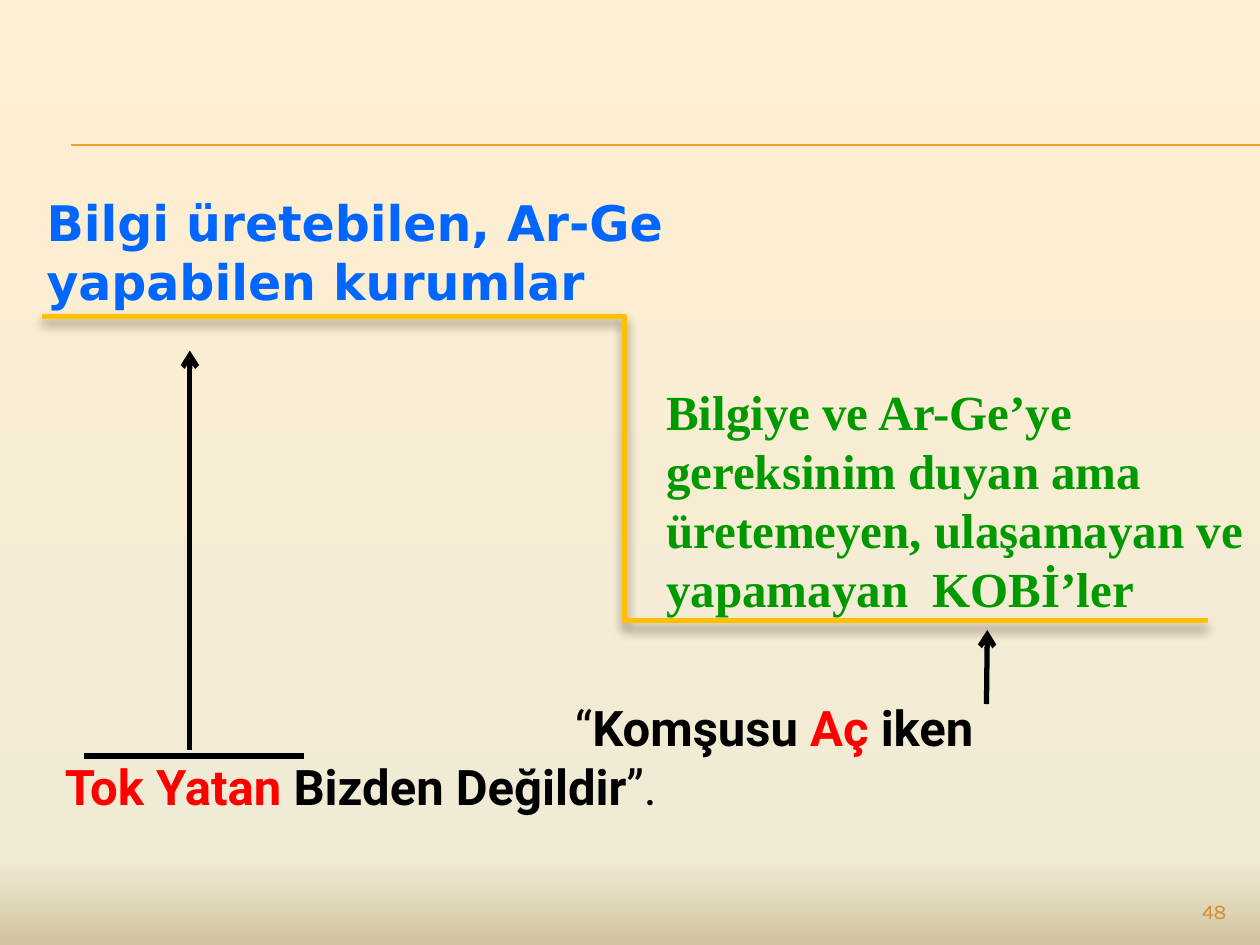
from lxml import etree
from pptx import Presentation
from pptx.dml.color import RGBColor
from pptx.enum.shapes import MSO_CONNECTOR
from pptx.enum.text import MSO_ANCHOR, PP_ALIGN
from pptx.oxml.ns import qn
from pptx.util import Pt

STRAIGHT = MSO_CONNECTOR.STRAIGHT
ELBOW = MSO_CONNECTOR.ELBOW
TOP = MSO_ANCHOR.TOP
LEFT = PP_ALIGN.LEFT
RIGHT = PP_ALIGN.RIGHT

BLACK = "000000"
RED = "FF0000"
GOLD = "FFC000"
RULE_ORANGE = "F0A22E"
BACKDROP = [(0, "FFEFD1"), (91, "F0EBD5"), (100, "D1C39F")]


def rgb(value):
    return RGBColor.from_string(value)


def add_node(parent, tag, **attributes):
    return etree.SubElement(parent, qn(tag), attributes)


def paint_backdrop(slide):
    fill = slide.background.fill
    fill.gradient()
    fill.gradient_angle = 270
    stops = slide.element.find(".//" + qn("a:gsLst"))
    for stop in list(stops):
        stops.remove(stop)
    for percent, color in BACKDROP:
        stop = add_node(stops, "a:gs", pos=str(percent * 1000))
        add_node(stop, "a:srgbClr", val=color)


def add_line(slide, start, end, color, width, kind=STRAIGHT, arrow=False):
    line = slide.shapes.add_connector(kind, *map(Pt, start + end))
    line.line.color.rgb = rgb(color)
    line.line.width = Pt(width)
    if arrow:
        add_node(line.line._get_or_add_ln(), "a:tailEnd", type="arrow")
    effects = add_node(line._element.spPr, "a:effectLst")
    return effects


def add_text(slide, box, paragraphs, font, align=LEFT, wrap=True, first_indent=0):
    frame = slide.shapes.add_textbox(*map(Pt, box)).text_frame
    frame.word_wrap = wrap
    frame.vertical_anchor = TOP
    for index, runs in enumerate(paragraphs):
        paragraph = frame.paragraphs[0] if index == 0 else frame.add_paragraph()
        paragraph.alignment = align
        if first_indent and index == 0:
            properties = paragraph._p.get_or_add_pPr()
            properties.set("marL", "0")
            properties.set("indent", str(Pt(first_indent)))
        for words, color, bold in runs:
            run = paragraph.add_run()
            run.text = words
            run.font.color.rgb = rgb(color)
            for name, value in {**font, "bold": bold}.items():
                setattr(run.font, name, value)


def add_header_rule(slide, box):
    left, top, width, gap = box
    for y in (top, top + gap):
        add_line(slide, (left, y), (left + width, y), RULE_ORANGE, 0.75)


def add_step(slide, box):
    left, top, width, height = box
    effects = add_line(
        slide, (left, top), (left + width, top + height), GOLD, 3, ELBOW
    )
    shadow = add_node(
        effects, "a:outerShdw", blurRad=str(Pt(6)), dist=str(Pt(4)),
        dir="5400000", algn="ctr", rotWithShape="0",
    )
    color = add_node(shadow, "a:srgbClr", val="4E3B30")
    add_node(color, "a:alpha", val="60000")


def add_producers(slide, box):
    heading = [("Bilgi üretebilen, Ar-Ge yapabilen kurumlar", "0066FF", True)]
    add_text(slide, box, [heading], {"name": "DejaVu Sans", "size": Pt(28)})


def add_businesses(slide, box):
    lines = (
        "Bilgiye ve Ar-Ge’ye",
        "gereksinim duyan ama",
        "üretemeyen, ulaşamayan ve",
        "yapamayan  KOBİ’ler",
    )
    add_text(
        slide, box, [[(words, "009900", True)] for words in lines],
        {"name": "Times New Roman", "size": Pt(28)}, wrap=False,
    )


def add_proverb(slide, box):
    left, top, width, height = box
    hungry_neighbour = [
        ("“", BLACK, False),
        ("Komşusu ", BLACK, True),
        ("Aç ", RED, True),
        ("iken", BLACK, True),
    ]
    well_fed = [
        ("Tok Yatan ", RED, True),
        ("Bizden Değildir", BLACK, True),
        ("”.", BLACK, False),
    ]
    add_text(
        slide, box, [hungry_neighbour, well_fed],
        {"name": "Roboto", "size": Pt(28)}, first_indent=291.5,
    )
    hungry_x, fed_x = left + 533.7, left + 78.5
    add_line(slide, (hungry_x, top + 7), (hungry_x + 0.5, top - 35.3), BLACK, 3, arrow=True)
    add_line(slide, (fed_x, top + 33), (fed_x, top - 195), BLACK, 3, arrow=True)
    add_line(slide, (left + 18, top + 36.7), (left + 144, top + 36.7), BLACK, 3)


def add_page_number(slide, box):
    number = [("48", "D48F29", False)]
    add_text(slide, box, [number], {"name": "Karla", "size": Pt(12)}, RIGHT)


def main():
    deck = Presentation()
    deck.slide_width, deck.slide_height = Pt(720), Pt(540)
    slide = deck.slides.add_slide(deck.slide_layouts[6])
    paint_backdrop(slide)
    add_header_rule(slide, (40.5, 82.8, 679.5, 0.5))
    add_businesses(slide, (373.7, 214.6, 347.8, 177))
    add_step(slide, (24, 180.7, 666, 174))
    add_producers(slide, (19.5, 106.5, 372, 75))
    add_proverb(slide, (30, 395.3, 660, 75))
    add_page_number(slide, (648, 510, 60, 19.5))
    deck.save("out.pptx")


if __name__ == "__main__":
    main()
